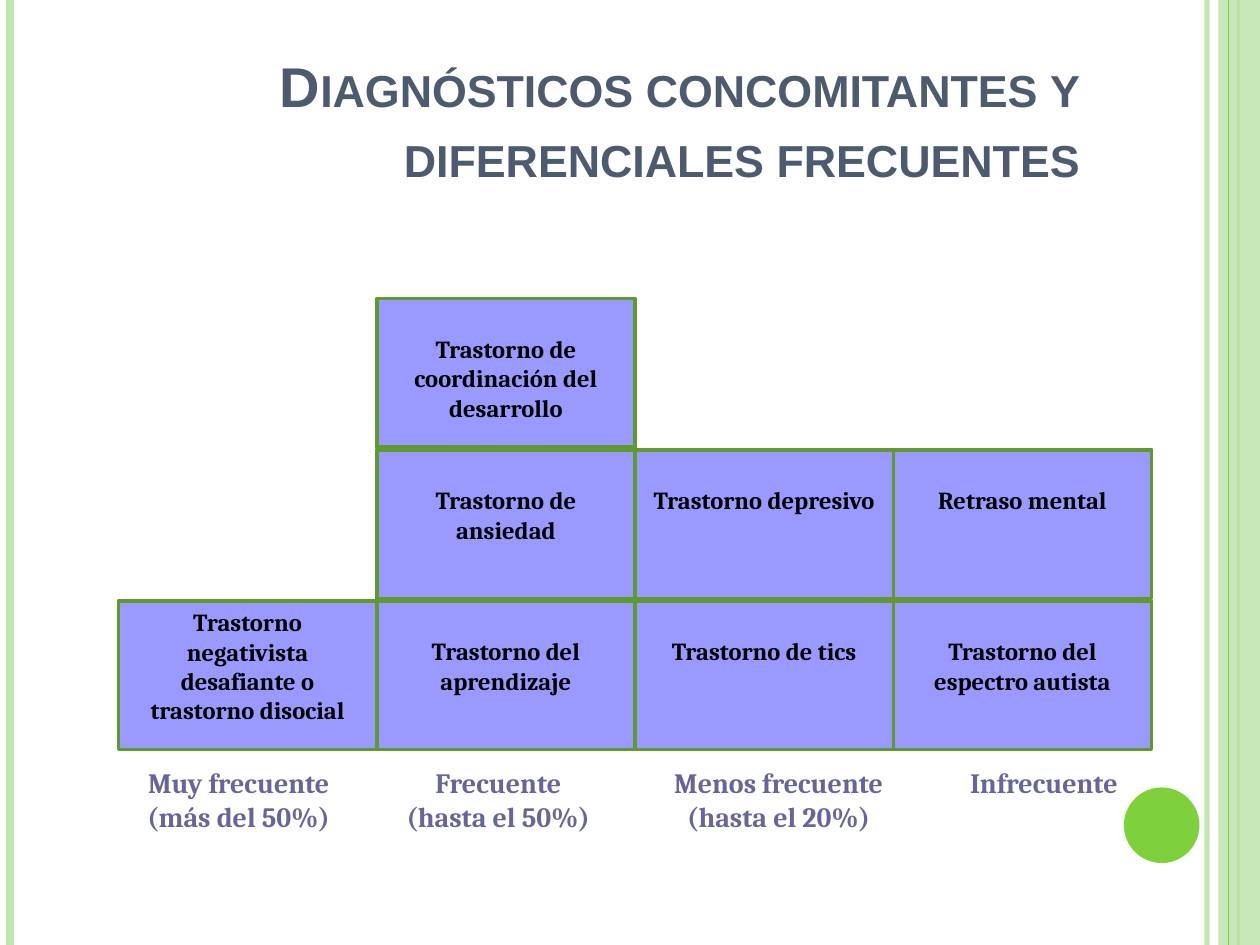
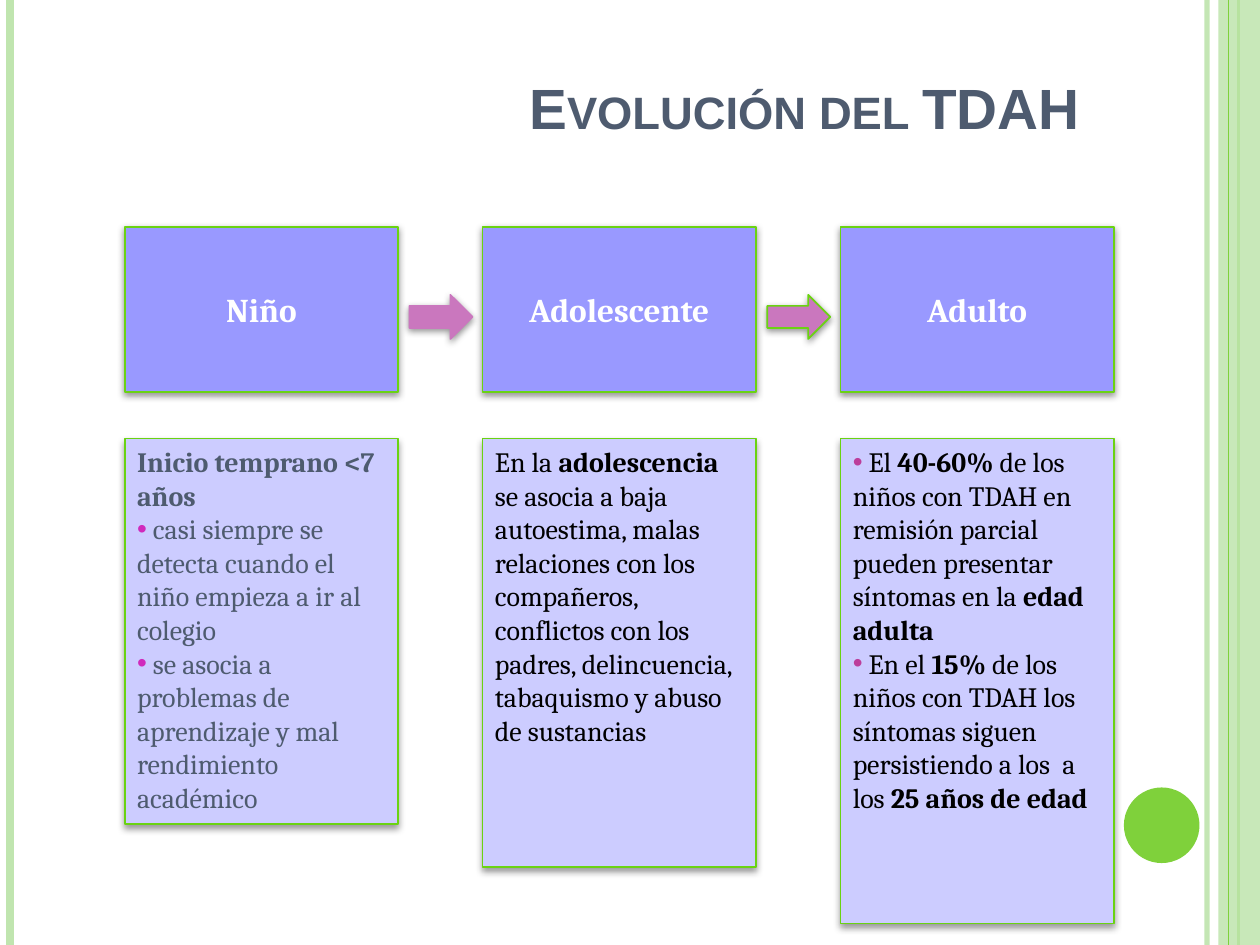
import lxml.etree
import pptx
import pptx.dml.color
import pptx.enum.shapes
import pptx.enum.text
import pptx.oxml.ns
import pptx.text.text
import pptx.util

RGBColor = pptx.dml.color.RGBColor
Inches = pptx.util.Inches
Pt = pptx.util.Pt
SHAPES = pptx.enum.shapes.MSO_SHAPE
ALIGN = pptx.enum.text.PP_ALIGN
qn = pptx.oxml.ns.qn

PALE_GREEN = RGBColor(0xC0, 0xE5, 0xAF)
GREEN = RGBColor(0x7F, 0xD1, 0x3B)
BRIGHT_GREEN = RGBColor(0x6A, 0xD3, 0x12)
DARK_GREEN = RGBColor(0x5E, 0x9B, 0x2C)
SLATE = RGBColor(0x4E, 0x5B, 0x6F)
VIOLET = RGBColor(0x99, 0x99, 0xFF)
LILAC = RGBColor(0xCC, 0xCC, 0xFF)
LABEL_VIOLET = RGBColor(0x66, 0x66, 0x99)
PINK = RGBColor(0xCA, 0x77, 0xBE)
MAGENTA = RGBColor(0xD0, 0x2A, 0xBC)
PLUM = RGBColor(0xBC, 0x3E, 0x9B)
BLACK = RGBColor(0, 0, 0)
WHITE = RGBColor(0xFF, 0xFF, 0xFF)


def add_box(page, kind, left, top, width, height, fill, line=None, weight=1, shadow=None):
    """Add a filled shape; shadow is (opacity %, blur pt, distance pt)."""
    box = page.shapes.add_shape(kind, Inches(left), Inches(top), Inches(width), Inches(height))
    box.shadow.inherit = False
    box.fill.solid()
    box.fill.fore_color.rgb = fill
    if line is None:
        box.line.fill.background()
    else:
        box.line.color.rgb = line
        box.line.width = Pt(weight)
    if shadow:
        opacity, blur, distance = shadow
        effects = box.element.spPr.find(qn("a:effectLst"))
        outer = lxml.etree.SubElement(effects, qn("a:outerShdw"), blurRad=str(Pt(blur)),
                                      dist=str(Pt(distance)), dir="5400000", rotWithShape="0")
        color = lxml.etree.SubElement(outer, qn("a:srgbClr"), val=str(BLACK))
        lxml.etree.SubElement(color, qn("a:alpha"), val=str(opacity * 1000))
    return box


def write(frame, lines, size, color, bold=None, align=ALIGN.CENTER, bullet=None):
    """Write paragraphs; *stars* mark bold words and a leading • makes a bullet."""
    frame.word_wrap = True
    for number, line in enumerate(lines):
        para = frame.add_paragraph() if number else frame.paragraphs[0]
        para.alignment = align
        para.font.name = "Cambria"
        para.font.size = Pt(size)
        para.font.color.rgb = color
        para.font.bold = bold
        if line.startswith("•"):
            properties = para._p.get_or_add_pPr()
            properties.set("marL", "0")
            properties.set("indent", "0")
            bullet_color = lxml.etree.Element(qn("a:buClr"))
            lxml.etree.SubElement(bullet_color, qn("a:srgbClr"), val=str(bullet))
            bullet_font = lxml.etree.Element(qn("a:buFont"), typeface="Arial")
            bullet_char = lxml.etree.Element(qn("a:buChar"), char="•")
            for part in (bullet_color, bullet_font, bullet_char):
                properties.find(qn("a:defRPr")).addprevious(part)
            line = line[1:]
        for position, words in enumerate(line.split("*")):
            if words:
                span = para.add_run()
                span.text = words
                if position % 2:
                    span.font.bold = True


deck = pptx.Presentation()
deck.slide_width, deck.slide_height = Inches(10), Inches(7.5)
title_only = deck.slide_layouts[5]
master = deck.slide_master

# Shared title style
master_title = master.placeholders[0]
master_title.left, master_title.top = Inches(0.5), Inches(0.3)
master_title.width, master_title.height = Inches(8.17), Inches(1.25)
master_title.text_frame.vertical_anchor = pptx.enum.text.MSO_ANCHOR.BOTTOM
title_level = master.element.find(".//" + qn("p:titleStyle") + "/" + qn("a:lvl1pPr"))
title_level.set("algn", "r")
title_properties = title_level.find(qn("a:defRPr"))
title_properties.set("cap", "small")
title_font = pptx.text.text.Font(title_properties)
title_font.name, title_font.size, title_font.bold = "Arial", Pt(32), True
title_font.color.rgb = SLATE

frequency_page = deck.slides.add_slide(title_only)
evolution_page = deck.slides.add_slide(title_only)

# Shared side bands, drawn once and moved to the master
bands = []
for x, color, weight in ((9.58, PALE_GREEN, 3), (0.08, PALE_GREEN, 4.5),
                         (9.83, GREEN, 1.5), (9.75, GREEN, 0.75)):
    band = frequency_page.shapes.add_connector(
        pptx.enum.shapes.MSO_CONNECTOR.STRAIGHT, Inches(x), 0, Inches(x), deck.slide_height)
    band.line.color.rgb = color
    band.line.width = Pt(weight)
    lxml.etree.SubElement(band.element.spPr, qn("a:effectLst"))
    bands.append(band)
side_panel = add_box(frequency_page, SHAPES.RECTANGLE, 9.67, 0, 0.33, 7.5, PALE_GREEN)
for band, opacity in ((bands[0], 93), (side_panel, 87)):
    color = next(band.element.spPr.iter(qn("a:srgbClr")))
    lxml.etree.SubElement(color, qn("a:alpha"), val=str(opacity * 1000))
bands.insert(3, side_panel)
bands.append(add_box(frequency_page, SHAPES.OVAL, 8.92, 6.25, 0.6, 0.6, GREEN))
for band in bands:
    master.shapes.element.append(band.element)

# Slide 1: diagnoses stacked by frequency
title = frequency_page.shapes.title
title.text_frame.text = "Diagnósticos concomitantes y diferenciales frecuentes"
title.text_frame.paragraphs[0].line_spacing = 1.04

GRID_LEFT, GRID_TOP = 0.94, 2.37
COLUMN, ROW, BOX_HEIGHT = 2.05, 1.2, 1.18
diagnoses = [
    (2, 0, "Trastorno negativista desafiante o trastorno disocial"),
    (2, 1, "Trastorno del aprendizaje"),
    (2, 2, "Trastorno de tics"),
    (2, 3, "Trastorno del espectro autista"),
    (1, 1, "Trastorno de ansiedad"),
    (0, 1, "Trastorno de coordinación del desarrollo"),
    (1, 2, "Trastorno depresivo"),
    (1, 3, "Retraso mental"),
]
for row, column, diagnosis in diagnoses:
    box = add_box(frequency_page, SHAPES.RECTANGLE, GRID_LEFT + column * COLUMN,
                  GRID_TOP + row * ROW, COLUMN, BOX_HEIGHT, VIOLET, DARK_GREEN, 2)
    box.text_frame.vertical_anchor = pptx.enum.text.MSO_ANCHOR.TOP
    if column:
        box.text_frame.margin_top = Inches(0.28)
    write(box.text_frame, [diagnosis], 14, BLACK, True)

frequencies = [
    (0.78, 2.23, ["Muy frecuente", "(más del 50%)"]),
    (2.99, 1.93, ["Frecuente", "(hasta el 50%)"]),
    (5.04, 2.28, ["Menos frecuente", "(hasta el 20%)"]),
    (7.4, 1.77, ["Infrecuente"]),
]
for left, width, lines in frequencies:
    label = frequency_page.shapes.add_textbox(
        Inches(left), Inches(6.03), Inches(width), Inches(0.1 + 0.27 * len(lines)))
    write(label.text_frame, lines, 16, LABEL_VIOLET, True)

# Slide 2: course of the disorder by age
title = evolution_page.shapes.title
title.left, title.top, title.width, title.height = (
    Inches(0.5), Inches(0.3), Inches(8.17), Inches(0.87))
title.text_frame.text = "Evolución del TDAH"
title.text_frame.paragraphs[0].font.size = Pt(32.4)

STAGE_LEFT, STAGE_STEP, STAGE_WIDTH = 0.99, 2.84, 2.17
stages = [
    ("Niño", 3.06, SLATE, MAGENTA, [
        "*Inicio temprano <7 años*",
        "• casi siempre se detecta cuando el niño empieza a ir al colegio",
        "• se asocia a problemas de aprendizaje y mal rendimiento académico"]),
    ("Adolescente", 3.4, BLACK, None, [
        "En la *adolescencia* se asocia a baja autoestima, malas relaciones con los "
        "compañeros, conflictos con los padres, delincuencia, tabaquismo y abuso de sustancias"]),
    ("Adulto", 3.85, BLACK, PLUM, [
        "• El *40-60%* de los niños con TDAH en remisión parcial pueden presentar "
        "síntomas en la *edad adulta*",
        "• En el *15%* de los niños con TDAH los síntomas siguen persistiendo a los  a "
        "los *25 años de edad*"]),
]
for number, (stage, height, color, bullet, lines) in enumerate(stages):
    left = STAGE_LEFT + number * STAGE_STEP
    add_box(evolution_page, SHAPES.RECTANGLE, left, 1.8, STAGE_WIDTH, 1.31,
            VIOLET, BRIGHT_GREEN, shadow=(42, 4, 1.6))
    label = evolution_page.shapes.add_textbox(
        Inches(left + 0.1), Inches(2.25), Inches(STAGE_WIDTH - 0.2), Inches(0.44))
    write(label.text_frame, [stage], 19, WHITE, True)
    card = add_box(evolution_page, SHAPES.RECTANGLE, left, 3.48, STAGE_WIDTH, height,
                   LILAC, BRIGHT_GREEN, shadow=(40, 4, 2))
    card.text_frame.vertical_anchor = pptx.enum.text.MSO_ANCHOR.TOP
    write(card.text_frame, lines, 16, color, align=ALIGN.LEFT, bullet=bullet)

# Arrows between the stages
for number, outline in enumerate((PINK, BRIGHT_GREEN)):
    left = STAGE_LEFT + number * STAGE_STEP + STAGE_WIDTH + 0.09
    add_box(evolution_page, SHAPES.RIGHT_ARROW, left, 2.34, 0.5, 0.35,
            PINK, outline, shadow=(42, 4, 1.6))

deck.save("out.pptx")
